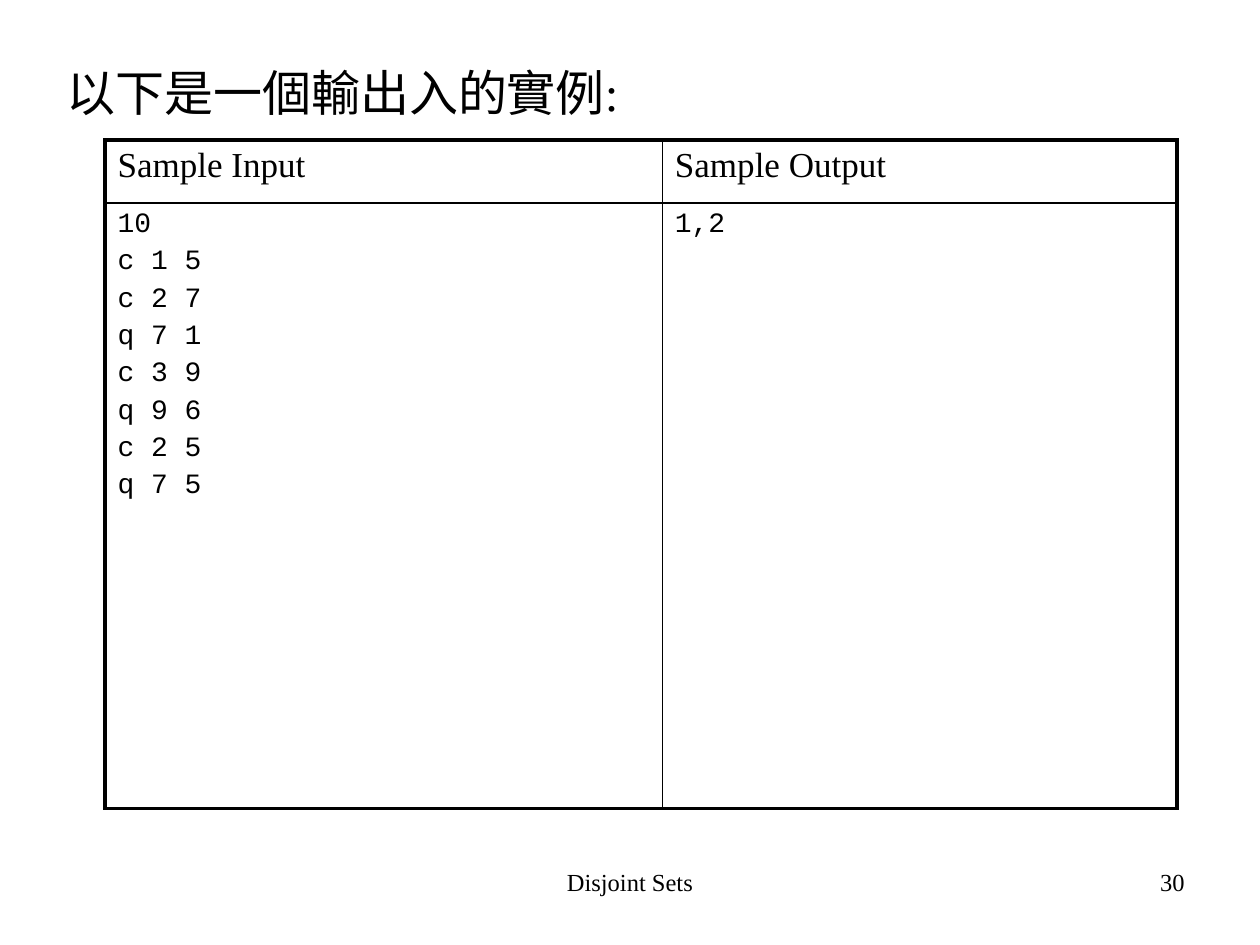
from dataclasses import dataclass

import pptx
import pptx.dml.color
import pptx.enum.text
import pptx.oxml
import pptx.oxml.ns
import pptx.util

Pt = pptx.util.Pt
Align = pptx.enum.text.PP_ALIGN


@dataclass(frozen=True)
class Theme:
    ink: str = "000000"
    serif: str = "Times New Roman"
    mono: str = "Courier New"
    heading: float = 28
    column_title: float = 20
    sample: float = 16
    footer: float = 14
    outer_border: float = 2.25
    inner_border: float = 1
    space_before: float = 0.2  # share of the type size


@dataclass(frozen=True)
class Style:
    size: float
    font: str
    align: Align = Align.LEFT
    spacing: float = 0
    hanging: float = 0


@dataclass(frozen=True)
class Label:
    text: str
    left: float
    top: float
    width: float
    height: float
    style: Style


THEME = Theme()
FOOTER_BAND = dict(top=492, height=37.5)
LABELS = [
    Label("Disjoint Sets", left=246, width=228, **FOOTER_BAND,
          style=Style(THEME.footer, THEME.serif, Align.CENTER)),
    Label("30", left=516, width=168, **FOOTER_BAND,
          style=Style(THEME.footer, THEME.serif, Align.RIGHT)),
    Label("以下是一個輸出入的實例:", left=31, top=32, width=648, height=356,
          style=Style(THEME.heading, THEME.serif, spacing=THEME.space_before, hanging=27)),
]

SAMPLES = [
    ["Sample Input", "Sample Output"],
    ["10\nc 1 5\nc 2 7\nq 7 1\nc 3 9\nq 9 6\nc 2 5\nq 7 5", "1,2"],
]
ROW_STYLES = [
    Style(THEME.column_title, THEME.serif, spacing=THEME.space_before),
    Style(THEME.sample, THEME.mono, spacing=THEME.space_before),
]
TABLE_LEFT, TABLE_TOP = 60, 80
COLUMN_WIDTHS = [318.5, 294]
ROW_HEIGHTS = [36, 346]


def write_text(frame, text: str, style: Style) -> None:
    """Fill a text frame with one paragraph for each line of text."""
    frame.text = text
    for paragraph in frame.paragraphs:
        formats = {"alignment": style.align, "space_before": Pt(style.size * style.spacing)}
        for attribute, value in formats.items():
            setattr(paragraph, attribute, value)
        if style.hanging:
            properties = paragraph._p.get_or_add_pPr()
            properties.set("marL", str(Pt(style.hanging)))
            properties.set("indent", str(-Pt(style.hanging)))
        for run in paragraph.runs:
            for attribute, value in {"size": Pt(style.size), "name": style.font}.items():
                setattr(run.font, attribute, value)
            run.font.color.rgb = pptx.dml.color.RGBColor.from_string(THEME.ink)


def add_label(slide, label: Label) -> None:
    box = slide.shapes.add_textbox(
        Pt(label.left), Pt(label.top), Pt(label.width), Pt(label.height))
    box.text_frame.word_wrap = True
    write_text(box.text_frame, label.text, label.style)


def set_borders(cell, outer_sides: dict[str, bool]) -> None:
    """Draw the four sides, heavier where a side lies on the table's edge."""
    properties = cell._tc.get_or_add_tcPr()
    for side, is_outer in outer_sides.items():
        width = Pt(THEME.outer_border if is_outer else THEME.inner_border)
        properties.append(pptx.oxml.parse_xml(
            f'<a:ln{side} {pptx.oxml.ns.nsdecls("a")} w="{width}">'
            f'<a:solidFill><a:srgbClr val="{THEME.ink}"/></a:solidFill></a:ln{side}>'))


def add_sample_table(slide) -> None:
    last_row, last_column = len(ROW_HEIGHTS) - 1, len(COLUMN_WIDTHS) - 1
    table = slide.shapes.add_table(
        len(ROW_HEIGHTS), len(COLUMN_WIDTHS), Pt(TABLE_LEFT), Pt(TABLE_TOP),
        Pt(sum(COLUMN_WIDTHS)), Pt(sum(ROW_HEIGHTS))).table
    for attribute in ("first_row", "horz_banding"):
        setattr(table, attribute, False)
    for column, width in zip(table.columns, COLUMN_WIDTHS):
        column.width = Pt(width)
    for r, (row, height) in enumerate(zip(table.rows, ROW_HEIGHTS)):
        row.height = Pt(height)
        for c, cell in enumerate(row.cells):
            write_text(cell.text_frame, SAMPLES[r][c], ROW_STYLES[r])
            set_borders(cell, {"L": c == 0, "R": c == last_column,
                               "T": r == 0, "B": r == last_row})
            cell.fill.background()


def main() -> None:
    deck = pptx.Presentation()
    deck.slide_width, deck.slide_height = Pt(720), Pt(540)
    slide = deck.slides.add_slide(deck.slide_layouts[6])
    for label in LABELS:
        add_label(slide, label)
    add_sample_table(slide)
    deck.save("out.pptx")


if __name__ == "__main__":
    main()
